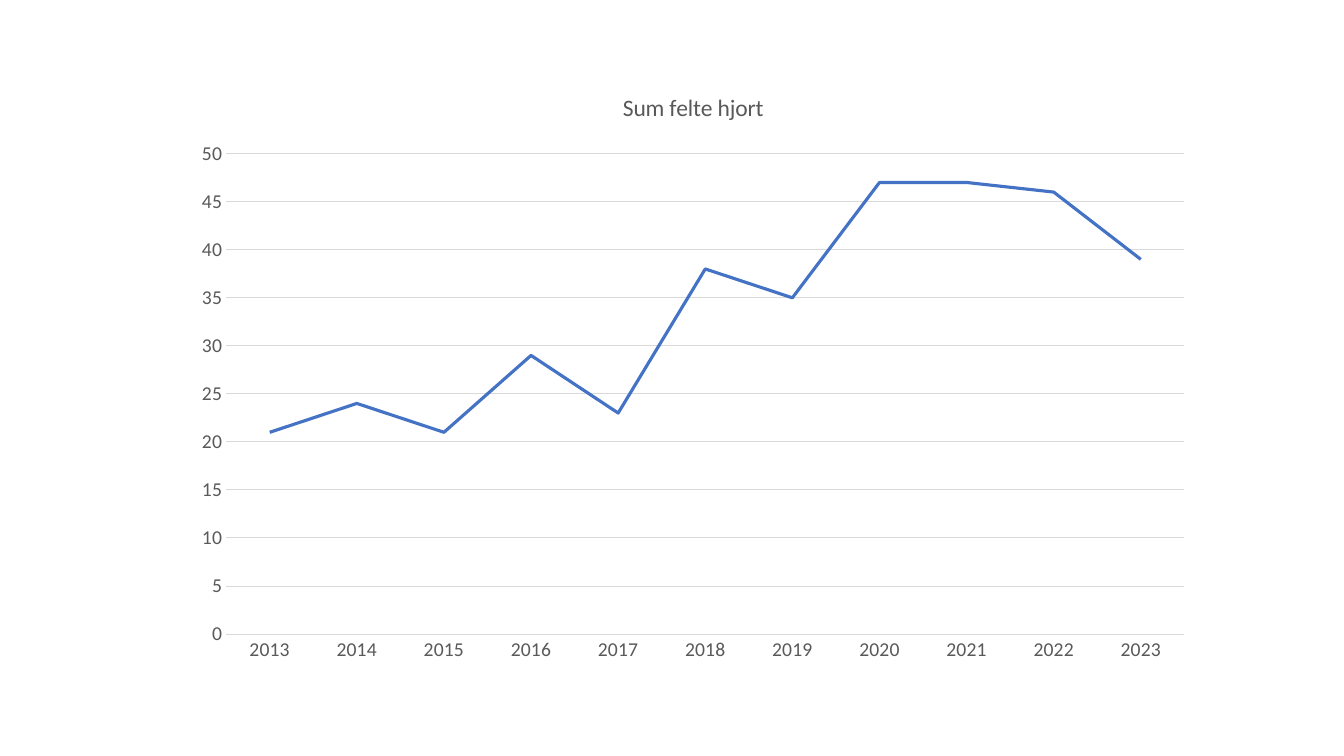
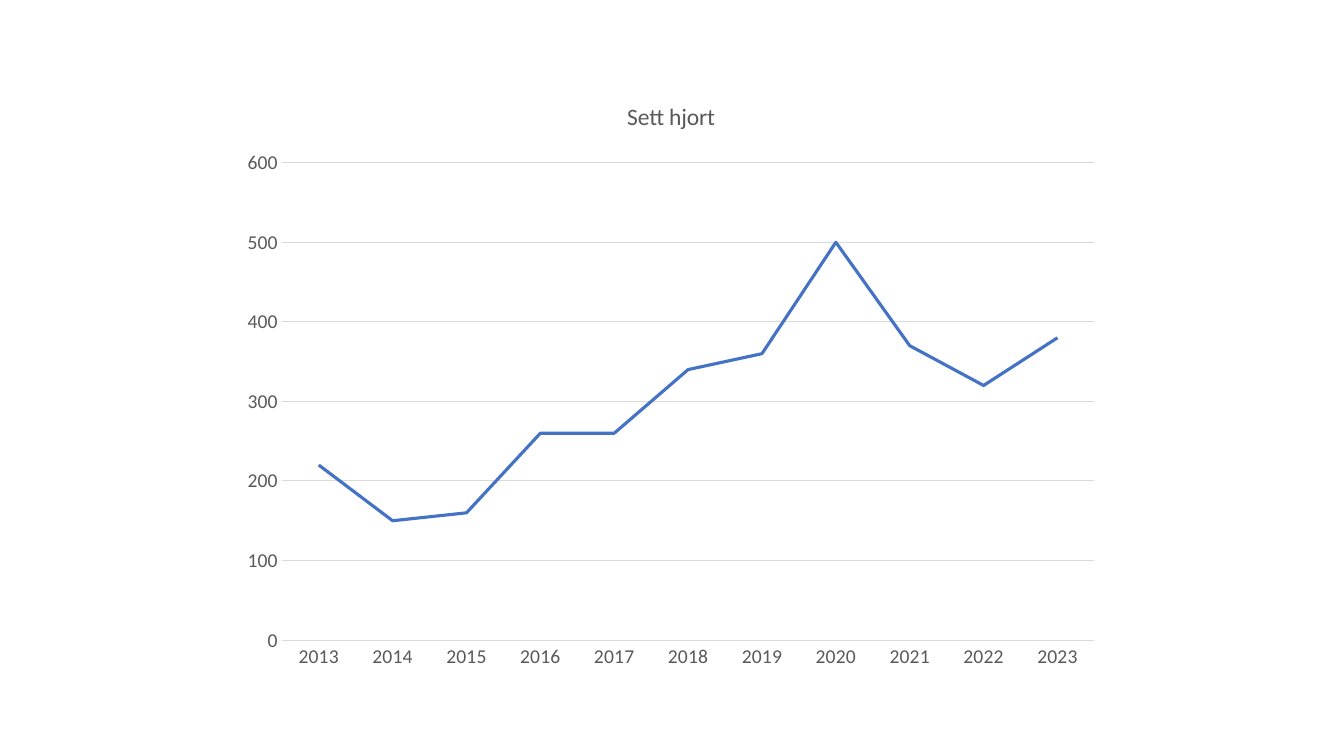
from dataclasses import dataclass

from pptx import Presentation
from pptx.chart.data import CategoryChartData
from pptx.dml.color import RGBColor
from pptx.enum.chart import XL_CHART_TYPE, XL_MARKER_STYLE, XL_TICK_MARK
from pptx.util import Inches, Pt

LINE_CHART = XL_CHART_TYPE.LINE
NO_MARKER = XL_MARKER_STYLE.NONE
NO_TICK = XL_TICK_MARK.NONE

YEARS = [str(year) for year in range(2013, 2024)]
CHARTS = [
    {"title": "Sum felte hjort", "box": (1.8, 0.69, 10.15, 6), "top": 50, "step": 5,
     "values": (21, 24, 21, 29, 23, 38, 35, 47, 47, 46, 39)},
    {"title": "Sett hjort", "box": (2.28, 0.78, 8.75, 5.97), "top": 600, "step": 100,
     "values": (220, 150, 160, 260, 260, 340, 360, 500, 370, 320, 380)},
]


@dataclass(frozen=True)
class Theme:
    """Colours, type sizes and line widths shared by the slides."""
    font: str = "Calibri"
    text: RGBColor = RGBColor(0x59, 0x59, 0x59)
    rule: RGBColor = RGBColor(0xD9, 0xD9, 0xD9)
    accent: RGBColor = RGBColor(0x44, 0x72, 0xC4)
    title_size: float = 16.8
    label_size: float = 14
    rule_width: float = 0.75
    series_width: float = 2.25


THEME = Theme()


def style_font(font, size):
    font.name, font.size, font.bold = THEME.font, Pt(size), False
    font.color.rgb = THEME.text


def style_line(line, color, width):
    line.color.rgb, line.width = color, Pt(width)


def style_title(chart, text):
    chart.has_title = True
    chart.chart_title.include_in_layout = False
    p = chart.chart_title.text_frame.paragraphs[0]
    p.text = text
    style_font(p.font, THEME.title_size)
    style_font(p.runs[0].font, THEME.title_size)


def style_axes(chart, top, step):
    cat, val = chart.category_axis, chart.value_axis
    for axis in (cat, val):
        axis.major_tick_mark = axis.minor_tick_mark = NO_TICK
        style_font(axis.tick_labels.font, THEME.label_size)
    val.minimum_scale, val.maximum_scale, val.major_unit = 0, top, step
    val.has_major_gridlines = True
    val.format.line.fill.background()
    for line in (cat.format.line, val.major_gridlines.format.line):
        style_line(line, THEME.rule, THEME.rule_width)


def add_line_chart(s, item):
    data = CategoryChartData()
    data.categories = YEARS
    data.add_series(item["title"], item["values"])
    box = [Inches(n) for n in item["box"]]
    chart = s.shapes.add_chart(LINE_CHART, *box, data).chart
    chart.has_legend = False
    style_font(chart.font, THEME.label_size)
    style_title(chart, item["title"])
    style_axes(chart, item["top"], item["step"])
    plot = chart.plots[0]
    plot.vary_by_categories = False
    series = plot.series[0]
    series.smooth = False
    series.marker.style = NO_MARKER
    style_line(series.format.line, THEME.accent, THEME.series_width)


def main():
    prs = Presentation()
    prs.slide_width, prs.slide_height = Inches(13.33), Inches(7.5)
    for item in CHARTS:
        s = prs.slides.add_slide(prs.slide_layouts[6])
        add_line_chart(s, item)
    prs.save("out.pptx")


if __name__ == "__main__":
    main()
